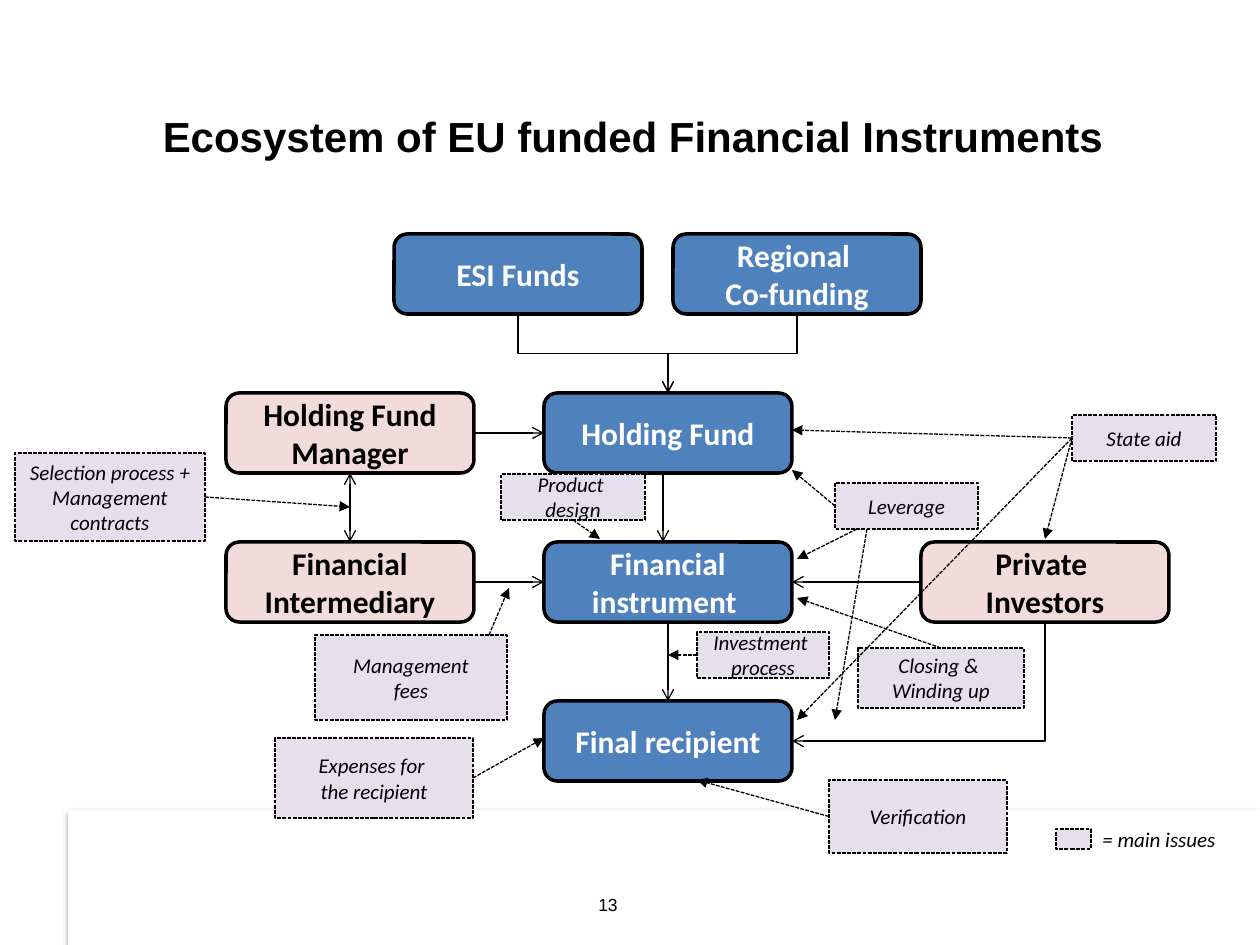
import lxml.etree
import pptx
import pptx.dml.color
import pptx.enum.dml
import pptx.enum.shapes
import pptx.enum.text
import pptx.oxml
import pptx.oxml.ns
import pptx.util

EMU_PER_PX = 914400 / 126
COLORS = {"black": "000000", "white": "FFFFFF", "blue": "4F81BD",
          "pink": "F2DCDB", "lilac": "E6E0EC"}
SHAPES = pptx.enum.shapes.MSO_SHAPE
CONNECTORS = pptx.enum.shapes.MSO_CONNECTOR
ALIGN = pptx.enum.text.PP_ALIGN
MIDDLE = pptx.enum.text.MSO_ANCHOR.MIDDLE
SYS_DASH = pptx.enum.dml.MSO_LINE.SQUARE_DOT
TOP, LEFT, BOTTOM, RIGHT = range(4)
qn = pptx.oxml.ns.qn
rgb = {name: pptx.dml.color.RGBColor.from_string(code) for name, code in COLORS.items()}


def px(*lengths):
    return [pptx.util.Emu(round(length * EMU_PER_PX)) for length in lengths]


def write(box, text, font, size, color="black", bold=False, italic=False, align=ALIGN.CENTER):
    box.text_frame.text = text
    for para in box.text_frame.paragraphs:
        para.alignment = align
        para.font.name = font
        para.font.size = pptx.util.Pt(size)
        para.font.bold = bold
        para.font.italic = italic
        para.font.color.rgb = rgb[color]


deck = pptx.Presentation()
deck.slide_width, deck.slide_height = px(1260, 945)
page = deck.slides.add_slide(deck.slide_layouts[6])
shapes = page.shapes

# White footer panel with a soft shadow
panel = shapes.add_shape(SHAPES.RECTANGLE, *px(68, 810, 1192, 135))
panel.fill.solid()
panel.fill.fore_color.rgb = rgb["white"]
panel.line.fill.background()
panel.shadow.inherit = False
effects = panel._element.spPr.find(qn("a:effectLst"))
shadow = lxml.etree.SubElement(effects, qn("a:outerShdw"), blurRad="39370",
                               dist="22860", dir="5400000", rotWithShape="0")
shade = lxml.etree.SubElement(shadow, qn("a:srgbClr"), val=COLORS["black"])
lxml.etree.SubElement(shade, qn("a:alpha"), val="35000")

# Title
title = shapes.add_textbox(*px(74, 57, 1118, 157))
title.text_frame.word_wrap = True
title.text_frame.vertical_anchor = MIDDLE
write(title, "Ecosystem of EU funded Financial Instruments", "Arial", 24, bold=True)

# Main actors: text, left, top, fill, text colour
NODE_W, NODE_H = 248, 80
nodes = {
    "final": ("Final recipient", 544, 701, "blue", "white"),
    "instrument": ("Financial instrument ", 544, 542, "blue", "white"),
    "holding": ("Holding Fund", 544, 393, "blue", "white"),
    "esi": ("ESI Funds", 394, 234, "blue", "white"),
    "investors": ("Private \vInvestors", 921, 542, "pink", "black"),
    "regional": ("Regional \vCo-funding", 673, 234, "blue", "white"),
    "intermediary": ("Financial Intermediary", 226, 542, "pink", "black"),
    "manager": ("Holding Fund Manager", 226, 393, "pink", "black"),
}
boxes = {}
for name, (text, left, top, fill, color) in nodes.items():
    box = shapes.add_shape(SHAPES.ROUNDED_RECTANGLE, *px(left, top, NODE_W, NODE_H))
    box.fill.solid()
    box.fill.fore_color.rgb = rgb[fill]
    box.line.color.rgb = rgb["black"]
    box.line.width = pptx.util.Pt(2)
    box.shadow.inherit = False
    write(box, text, "Calibri", 18, color, bold=True)
    boxes[name] = box

# Main issues: text, left, top, width, height
issues = {
    "fees": ("Management\nfees", 315, 635, 192, 85),
    "aid": ("State aid", 1072, 415, 144, 46),
    "leverage": ("Leverage", 835, 483, 143, 46),
    "design": ("Product \ndesign", 501, 474, 144, 46),
    "process": ("Investment \nprocess", 697, 632, 132, 46),
    "expenses": ("Expenses for \nthe recipient", 275, 738, 198, 80),
    "selection": ("Selection process +\nManagement contracts", 15, 453, 190, 88),
    "closing": ("Closing & \nWinding up", 858, 648, 166, 60),
    "verification": ("Verification", 829, 780, 178, 73),
    "legend": ("", 1056, 829, 35, 20),
}
for name, (text, *bounds) in issues.items():
    box = shapes.add_shape(SHAPES.RECTANGLE, *px(*bounds))
    box.fill.solid()
    box.fill.fore_color.rgb = rgb["lilac"]
    box.line.color.rgb = rgb["black"]
    box.line.width = pptx.util.Pt(0.75)
    box.line.dash_style = SYS_DASH
    box.shadow.inherit = False
    if text:
        write(box, text, "Calibri", 12, italic=True)
    boxes[name] = box

# Legend label and page number
label = shapes.add_textbox(*px(1090, 820, 140, 38))
label.text_frame.word_wrap = False
write(label, "= main issues", "Calibri", 12, italic=True, align=ALIGN.LEFT)
number = shapes.add_textbox(*px(461, 888, 294, 50))
number.text_frame.word_wrap = True
write(number, "13", "Arial", 10)

# Straight arrows: each end is a (box, side) pair or an (x, y) point
flows = [
    (("manager", RIGHT), ("holding", LEFT)),
    (("intermediary", RIGHT), ("instrument", LEFT)),
    (("investors", LEFT), ("instrument", RIGHT)),
    (("instrument", BOTTOM), ("final", TOP)),
    (("manager", BOTTOM), ("intermediary", TOP)),
    ((663, 473), (663, 542)),
]
issue_links = [
    ((489, 635), (509, 588)),
    (("selection", RIGHT), (350, 507)),
    (("expenses", RIGHT), (544, 738)),
    (("leverage", LEFT), (792, 470)),
    ((857, 529), (797, 559)),
    ((867, 529), (835, 720)),
    (("process", LEFT), (668, 655)),
    (("closing", TOP), (797, 598)),
    (("design", BOTTOM), (600, 539)),
    (("aid", LEFT), (792, 430)),
    (("aid", LEFT), (1045, 539)),
    (("aid", LEFT), (797, 720)),
    (("verification", LEFT), (697, 780)),
]
arrows = []
for start, end in flows + issue_links:
    points = [(0, 0) if isinstance(spot[0], str) else spot for spot in (start, end)]
    arrow = shapes.add_connector(CONNECTORS.STRAIGHT, *px(*points[0], *points[1]))
    if isinstance(start[0], str):
        arrow.begin_connect(boxes[start[0]], start[1])
    if isinstance(end[0], str):
        arrow.end_connect(boxes[end[0]], end[1])
    dashed = (start, end) in issue_links
    two_way = (start, end) == (("manager", BOTTOM), ("intermediary", TOP))
    arrows.append((arrow, dashed, two_way))

# Elbow arrows leave downwards, so the preset is turned by a quarter
elbows = [
    ("bentConnector3", (518, 314), (668, 393)),
    ("bentConnector3", (797, 314), (668, 393)),
    ("bentConnector2", (1045, 622), (792, 741)),
]
for preset, (x1, y1), (x2, y2) in elbows:
    run, drop = abs(x2 - x1), y2 - y1
    left, top = (x1 + x2 - drop) / 2, (y1 + y2 - run) / 2
    arrow = shapes.add_connector(CONNECTORS.ELBOW, *px(left, top, left + drop, top + run))
    properties = arrow._element.spPr
    properties.find(qn("a:prstGeom")).set("prst", preset)
    frame = properties.find(qn("a:xfrm"))
    if x2 > x1:
        frame.set("rot", "16200000")
        frame.set("flipH", "1")
    else:
        frame.set("rot", "5400000")
    arrows.append((arrow, False, False))

# Line style and arrowheads
for arrow, dashed, two_way in arrows:
    arrow.line.color.rgb = rgb["black"]
    arrow.line.width = pptx.util.Pt(0.75)
    if dashed:
        arrow.line.dash_style = SYS_DASH
    line = arrow.line._get_or_add_ln()
    if two_way:
        lxml.etree.SubElement(line, qn("a:headEnd"), type="arrow")
    lxml.etree.SubElement(line, qn("a:tailEnd"), type="triangle" if dashed else "arrow")
    lxml.etree.SubElement(arrow._element.spPr, qn("a:effectLst"))

deck.save("out.pptx")
